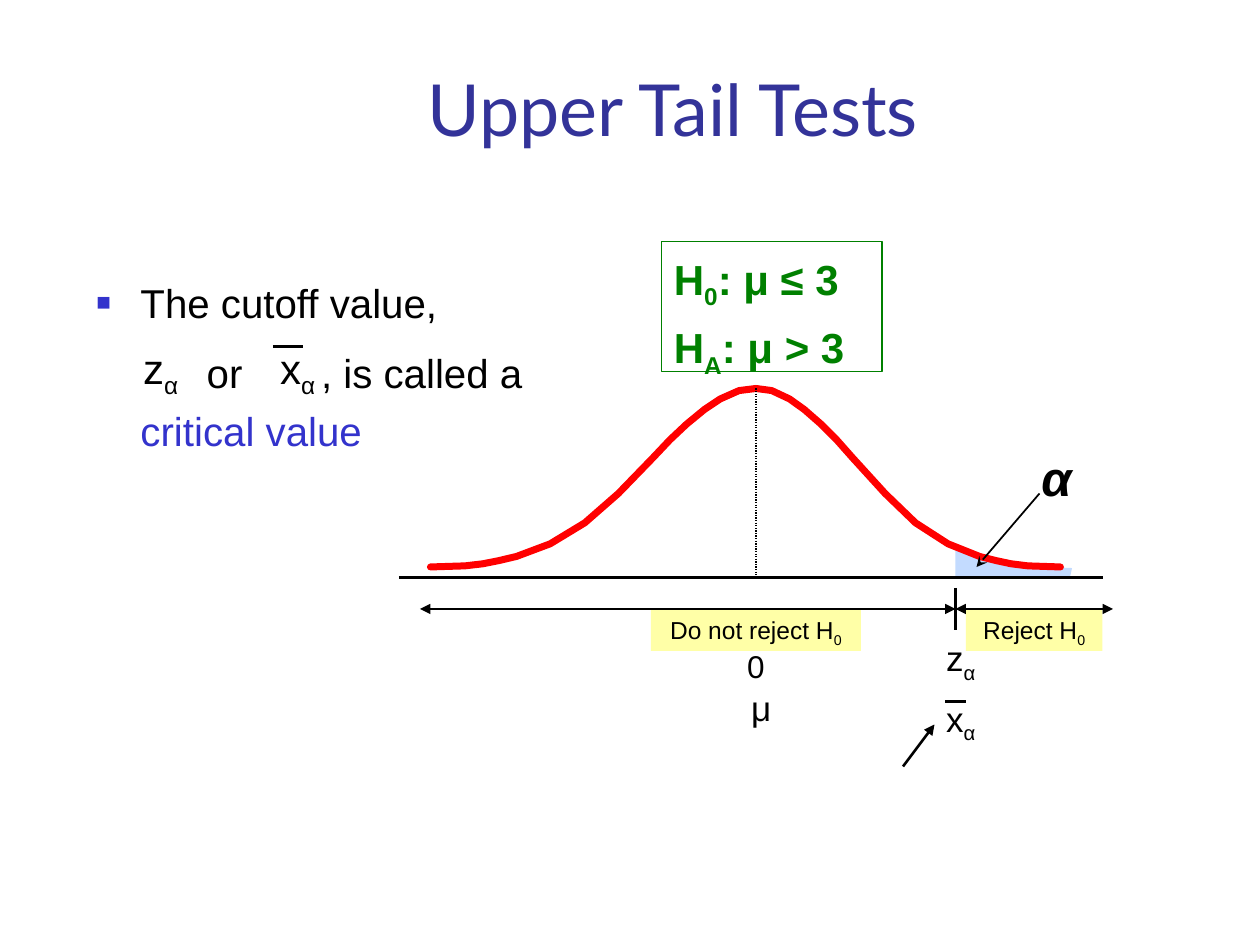
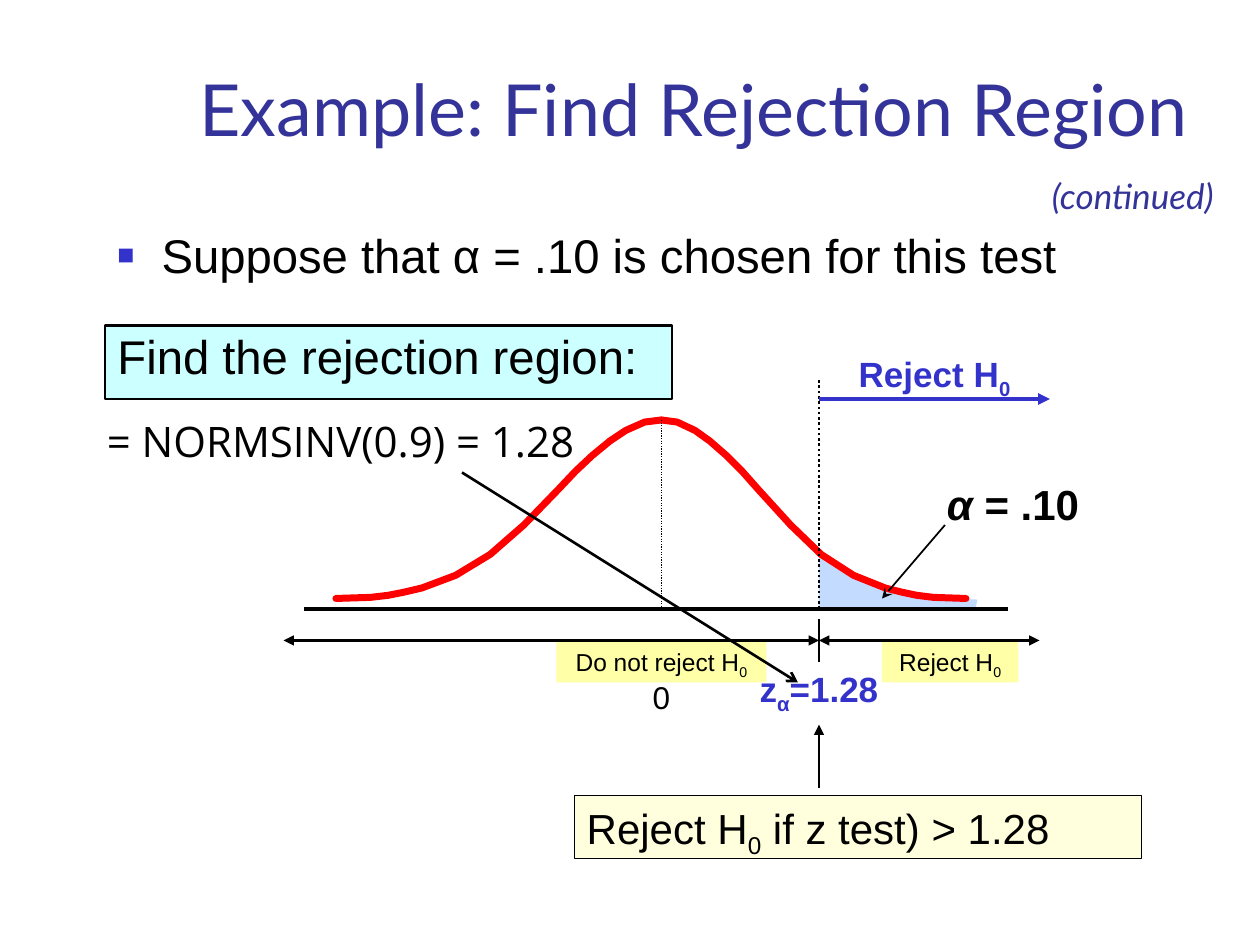
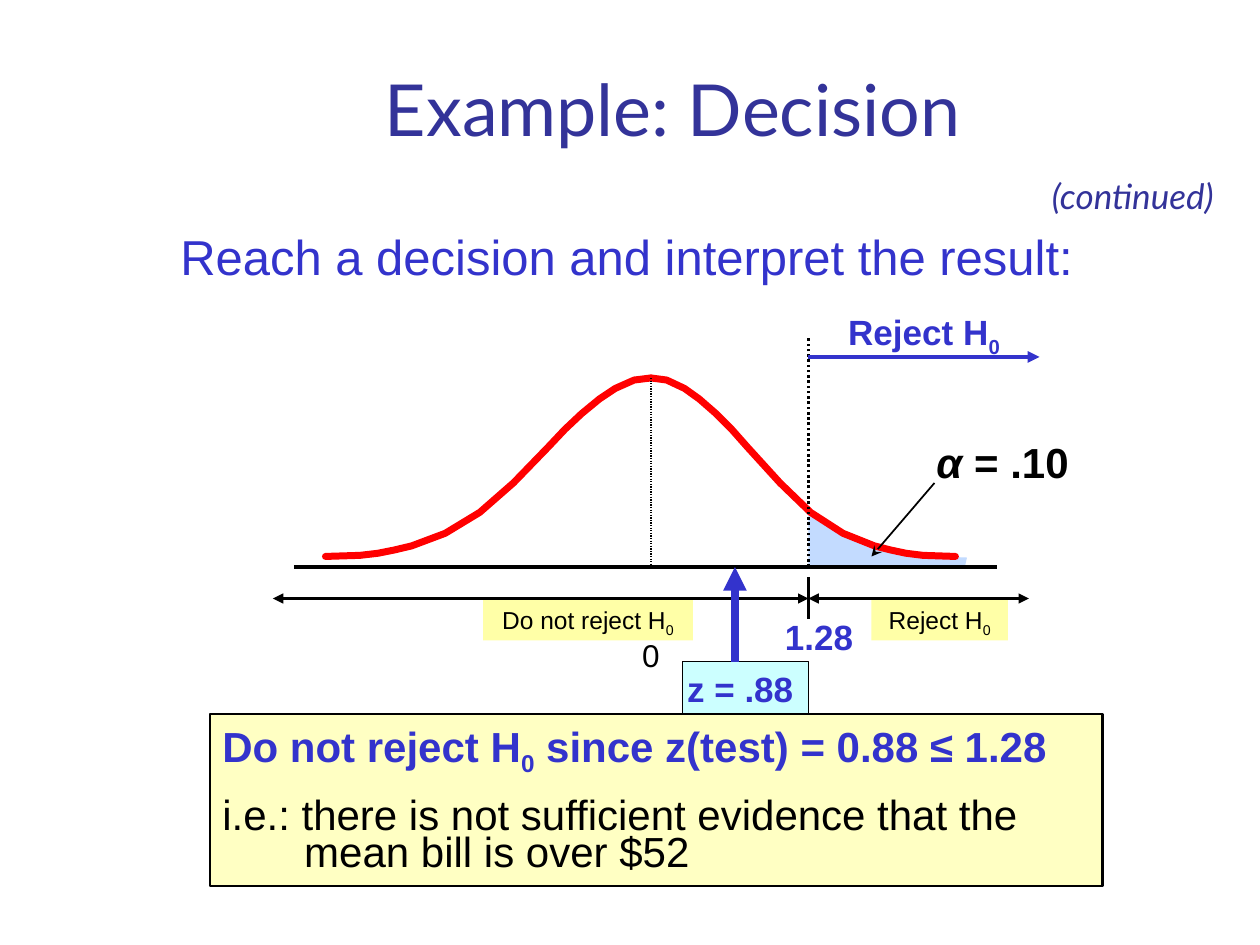
from dataclasses import dataclass, field

from lxml.etree import SubElement
from pptx import Presentation
from pptx.dml.color import RGBColor
from pptx.enum.dml import MSO_LINE
from pptx.enum.shapes import MSO_CONNECTOR, MSO_SHAPE
from pptx.enum.text import MSO_ANCHOR, MSO_AUTO_SIZE, PP_ALIGN
from pptx.oxml.ns import qn
from pptx.util import Emu, Pt

EMU_PER_PX = 7620
PAGE = (0, 0)
HALF_CURVE = [
    (310, 170), (277, 169), (260, 167), (245, 164), (228, 160), (212, 154),
    (196, 148), (163, 128), (131, 100), (98, 66), (82, 49), (66, 34),
    (49, 20), (34, 10), (16, 2), (0, 0),
]
TAIL_END = [(299, 180), (301, 171), (252, 169), (221, 161)]


@dataclass(frozen=True)
class Theme:
    """Colours, fonts and type sizes shared by the slides."""

    title: str = "333399"
    accent: str = "3333CC"
    ink: str = "000000"
    curve: str = "FF0000"
    tail: str = "C3DBFF"
    label: str = "FFFFA7"
    prompt: str = "CCFFFF"
    rule: str = "FFFFDD"
    decision: str = "FFFFC3"
    hypothesis: str = "008000"
    body_font: str = "Arial"
    title_font: str = "Lato"
    formula_font: str = "Open Sans"
    title_size: int = 41
    lead_size: int = 28
    bullet_size: int = 27
    text_size: int = 24
    cutoff_body_size: int = 23
    mark_size: int = 20
    zero_size: int = 18
    label_size: int = 14


THEME = Theme()


@dataclass
class Line:
    """One paragraph; underscores in its text enclose subscripts."""

    text: str
    style: dict = field(default_factory=dict)
    spacing: float = 1.0
    gap: object = 0.5
    left: int = 0
    hanging: int = 0
    bullet: bool = False
    lead: str = ""


def px(value):
    """Turn pixels into EMU."""
    return Emu(round(value * EMU_PER_PX))


def style(size, color=THEME.ink, name=THEME.body_font, **extra):
    """Describe a text style."""
    return {"size": Pt(size), "color": color, "name": name, **extra}


def add_run(paragraph, text, values, subscript=False):
    """Add one formatted run."""
    run = paragraph.add_run()
    run.text = text
    for key, value in values.items():
        if key == "color":
            run.font.color.rgb = RGBColor.from_string(value)
        else:
            setattr(run.font, key, value)
    if subscript:
        run._r.get_or_add_rPr().set("baseline", "-25000")


def set_gap(paragraph, gap):
    """Set space before as a length or as a share of the line."""
    paragraph.space_before = gap if isinstance(gap, Pt) else Pt(0)
    if isinstance(gap, float):
        spacing = paragraph._p.pPr.find(qn("a:spcBef"))
        spacing.remove(spacing[0])
        SubElement(spacing, qn("a:spcPct"), val=str(round(gap * 100000)))


def set_indent(paragraph, line):
    """Set the indent and the bullet."""
    properties = paragraph._p.get_or_add_pPr()
    properties.set("marL", str(px(line.left)))
    properties.set("indent", str(px(-line.hanging)))
    if line.bullet:
        color = SubElement(properties, qn("a:buClr"))
        SubElement(color, qn("a:srgbClr"), val=THEME.accent)
        SubElement(properties, qn("a:buSzPct"), val="60000")
        SubElement(properties, qn("a:buFont"), typeface=THEME.body_font)
        SubElement(properties, qn("a:buChar"), char="■")
    else:
        SubElement(properties, qn("a:buNone"))


def paint(shape, fill=None, outline=None, width=0.75):
    """Set the fill and outline of a shape and drop its shadow."""
    shape.shadow.inherit = False
    if fill:
        shape.fill.solid()
        shape.fill.fore_color.rgb = RGBColor.from_string(fill)
    else:
        shape.fill.background()
    if outline:
        shape.line.color.rgb = RGBColor.from_string(outline)
        shape.line.width = Pt(width)
    else:
        shape.line.fill.background()


def add_panel(slide, origin, box, **look):
    """Add a rectangle at a place relative to the origin."""
    left, top, width, height = box
    shape = slide.shapes.add_shape(
        MSO_SHAPE.RECTANGLE, px(origin[0] + left), px(origin[1] + top), px(width), px(height))
    paint(shape, **look)
    return shape


def add_text(slide, origin, box, lines, base, look=None, align=PP_ALIGN.LEFT,
             anchor=MSO_ANCHOR.TOP, wrap=True, fit=True):
    """Add lines of text, in a panel when a look is given."""
    if look:
        shape = add_panel(slide, origin, box, **look)
    else:
        left, top, width, height = box
        shape = slide.shapes.add_textbox(
            px(origin[0] + left), px(origin[1] + top), px(width), px(height))
    frame = shape.text_frame
    frame_format = {
        "word_wrap": wrap,
        "vertical_anchor": anchor,
        "auto_size": MSO_AUTO_SIZE.SHAPE_TO_FIT_TEXT if fit else MSO_AUTO_SIZE.NONE,
    }
    for key, value in frame_format.items():
        setattr(frame, key, value)
    lines = [Line(lines)] if isinstance(lines, str) else lines
    for index, line in enumerate(lines):
        paragraph = frame.add_paragraph() if index else frame.paragraphs[0]
        paragraph.alignment = align
        paragraph.line_spacing = line.spacing
        set_gap(paragraph, line.gap if index else 0)
        set_indent(paragraph, line)
        values = {**base, **line.style}
        if line.lead:
            add_run(paragraph, line.lead, {**values, "italic": True})
        for position, part in enumerate(line.text.split("_")):
            if part:
                add_run(paragraph, part, values, subscript=position % 2 == 1)


def add_mark(slide, origin, box, text, size=THEME.mark_size, **extra):
    """Add a short centred mark."""
    add_text(slide, origin, box, text, style(size, **extra), align=PP_ALIGN.CENTER)


def add_line(slide, origin, start, end, width=1.5, color=THEME.ink, head=None, tail=None,
             dotted=False):
    """Add a straight line with optional arrowheads."""
    left, top = origin
    line = slide.shapes.add_connector(
        MSO_CONNECTOR.STRAIGHT, px(left + start[0]), px(top + start[1]),
        px(left + end[0]), px(top + end[1]))
    line.line.color.rgb = RGBColor.from_string(color)
    line.line.width = Pt(width)
    if dotted:
        line.line.dash_style = MSO_LINE.ROUND_DOT
    properties = line._element.spPr
    outline = properties.get_or_add_ln()
    for tag, kind in (("a:headEnd", head), ("a:tailEnd", tail)):
        if kind:
            SubElement(outline, qn(tag), type=kind)
    SubElement(properties, qn("a:effectLst"))


def add_outline(slide, origin, points, close, **look):
    """Add a freeform through points relative to the origin."""
    points = [(origin[0] + x, origin[1] + y) for x, y in points]
    builder = slide.shapes.build_freeform(*points[0], scale=EMU_PER_PX)
    builder.add_line_segments(points[1:], close=close)
    shape = builder.convert_to_shape()
    paint(shape, **look)
    return shape


def draw_distribution(slide, peak, cutoff=150, tail_start=((190, 151), (150, 126)),
                      ends=(-360, 360), accept_left=-100, reject_left=210):
    """Draw the bell curve, its axis and its regions around the peak."""
    for left, width, text in ((reject_left, 130, "Reject H_0_"),
                              (accept_left, 200, "Do not reject H_0_")):
        add_text(slide, peak, (left, 210, width, 40), text, style(THEME.label_size),
                 look={"fill": THEME.label}, align=PP_ALIGN.CENTER)
    add_outline(slide, peak, [*TAIL_END, *tail_start, (cutoff, 180)], True, fill=THEME.tail)
    for stretch in (-1, 290 / 310):
        points = [(round(x * stretch), y) for x, y in HALF_CURVE]
        curve = add_outline(slide, peak, points, False, outline=THEME.curve, width=4)
        curve._element.spPr.get_or_add_ln().set("cap", "rnd")
    add_line(slide, peak, (-340, 180), (330, 180), width=2)
    add_line(slide, peak, (270, 100), (210, 170), width=1, tail="stealth")
    add_line(slide, peak, (0, 0), (0, 180), width=0.75, dotted=True)
    add_line(slide, peak, (cutoff, 190), (cutoff, 230))
    for start, end in ((cutoff, ends[1]), (ends[0], cutoff)):
        add_line(slide, peak, (start, 210), (end, 210), head="triangle", tail="triangle")
    add_mark(slide, peak, (-30, 240, 60, 48), "0", THEME.zero_size)


def draw_rejection(slide, peak, cutoff=150):
    """Draw the cutoff line, the rejection arrow and the value of alpha."""
    add_line(slide, peak, (cutoff, 180), (cutoff, -40), dotted=True)
    add_line(slide, peak, (cutoff, -20), (cutoff + 220, -20), width=2.25,
             color=THEME.accent, tail="triangle")
    add_mark(slide, peak, (cutoff + 10, -70, 200, 52), "Reject H_0_",
             color=THEME.accent, bold=True)
    add_text(slide, peak, (260, 50, 160, 60), [Line("= .10", lead="α ")],
             style(THEME.text_size, bold=True))


def add_slide(presentation, title, title_box=(130, 50, 1022, 100), continued=True):
    """Add a blank slide with its title and continuation note."""
    slide = presentation.slides.add_slide(presentation.slide_layouts[6])
    add_text(slide, PAGE, title_box, title,
             style(THEME.title_size, THEME.title, THEME.title_font),
             align=PP_ALIGN.CENTER, anchor=MSO_ANCHOR.BOTTOM, fit=False)
    if continued:
        add_text(slide, PAGE, (990, 160, 193, 52), "(continued)",
                 style(THEME.mark_size, THEME.title, THEME.title_font, italic=True), wrap=False)
    return slide


def draw_cutoff_statement(slide, origin):
    """Write the sentence that names the critical value."""
    body = style(THEME.cutoff_body_size)
    lines = [
        Line("The cutoff value,", spacing=1.2, left=42, hanging=42, bullet=True),
        Line("or", spacing=1.2, gap=0.3, left=105),
        Line("critical value", {"color": THEME.accent}, spacing=1.2, gap=0, left=42),
    ]
    add_text(slide, origin, (0, 0, 450, 200), lines, body, fit=False)
    add_text(slide, origin, (214, 76, 230, 58), ", is called a", body, wrap=False)
    add_mark(slide, origin, (30, 70, 86, 60), "z_α_", THEME.text_size)
    add_mark(slide, origin, (170, 70, 67, 60), "x_α_", THEME.text_size)
    add_line(slide, origin, (180, 80), (209, 80))


def build_upper_tail(presentation):
    """Build the slide that defines the upper tail test."""
    slide = add_slide(presentation, "Upper Tail Tests", continued=False)
    peak = (720, 370)
    draw_cutoff_statement(slide, (80, 250))
    draw_distribution(slide, peak, cutoff=190, tail_start=((205, 158), (190, 150)),
                      ends=(-320, 340), reject_left=200)
    add_text(slide, peak, (260, 50, 70, 67), [Line("", lead="α")],
             style(THEME.lead_size, bold=True))
    for left, top, text in ((160, 230, "z_α_"), (160, 288, "x_α_"), (-30, 278, "μ")):
        add_mark(slide, peak, (left, top, 70, 52), text)
    add_line(slide, peak, (180, 298), (200, 298))
    add_line(slide, peak, (140, 360), (170, 320), tail="triangle")
    hypotheses = [Line("H_0_: μ ≤ 3", spacing=1.1), Line("H_A_: μ > 3", spacing=0.7)]
    add_text(slide, PAGE, (630, 230, 210, 124), hypotheses,
             style(THEME.text_size, THEME.hypothesis, bold=True),
             look={"outline": THEME.hypothesis})


def build_rejection_region(presentation):
    """Build the slide that finds the rejection region."""
    slide = add_slide(presentation, "Example: Find Rejection Region", (150, 40, 1022, 110))
    peak = (630, 400)
    add_panel(slide, PAGE, (100, 310, 540, 70), fill=THEME.prompt, outline=THEME.ink, width=1.5)
    lines = [
        Line("Suppose that α = .10 is chosen for this test", left=42, hanging=42, bullet=True),
        Line("Find the rejection region:", gap=Pt(25)),
    ]
    add_text(slide, PAGE, (100, 210, 1060, 230), lines, style(THEME.bullet_size), fit=False)
    draw_distribution(slide, peak)
    draw_rejection(slide, peak)
    add_mark(slide, peak, (80, 230, 140, 52), "z_α_=1.28", color=THEME.accent, bold=True)
    add_text(slide, PAGE, (547, 758, 540, 60), "Reject H_0_ if z test) > 1.28",
             style(THEME.text_size), look={"fill": THEME.rule, "outline": THEME.ink})
    add_line(slide, peak, (150, 350), (150, 290), tail="triangle")
    add_text(slide, PAGE, (76, 390, 497, 60), "= NORMSINV(0.9) = 1.28",
             style(THEME.text_size, name=THEME.formula_font), align=PP_ALIGN.CENTER, wrap=False)
    add_line(slide, PAGE, (440, 450), (760, 650), tail="arrow")


def build_decision(presentation):
    """Build the slide that reaches the decision."""
    slide = add_slide(presentation, "Example: Decision")
    peak = (620, 360)
    add_panel(slide, peak, (30, 270, 120, 50), fill=THEME.prompt, outline=THEME.ink)
    draw_distribution(slide, peak, accept_left=-160)
    draw_rejection(slide, peak)
    add_mark(slide, peak, (90, 220, 140, 52), "1.28", color=THEME.accent, bold=True)
    lines = [
        Line("Do not reject H_0_ since z(test) = 0.88 ≤ 1.28",
             {"color": THEME.accent, "bold": True}),
        Line("i.e.: there is not sufficient evidence that the", spacing=0.8),
        Line("mean bill is over $52", spacing=0.2, left=78),
    ]
    add_text(slide, PAGE, (200, 680, 850, 164), lines, style(THEME.text_size),
             look={"fill": THEME.decision, "outline": THEME.ink, "width": 1.5})
    add_line(slide, peak, (80, 270), (80, 180), width=4.5, color=THEME.accent, tail="triangle")
    add_mark(slide, peak, (10, 270, 150, 52), "z = .88", color=THEME.accent, bold=True)
    add_text(slide, PAGE, (160, 210, 960, 80), "Reach a decision and interpret the result:",
             style(THEME.lead_size, THEME.accent), fit=False)


def main():
    """Build and save the presentation."""
    presentation = Presentation()
    presentation.slide_width = px(1200)
    presentation.slide_height = px(900)
    for build in (build_upper_tail, build_rejection_region, build_decision):
        build(presentation)
    presentation.save("out.pptx")


if __name__ == "__main__":
    main()
